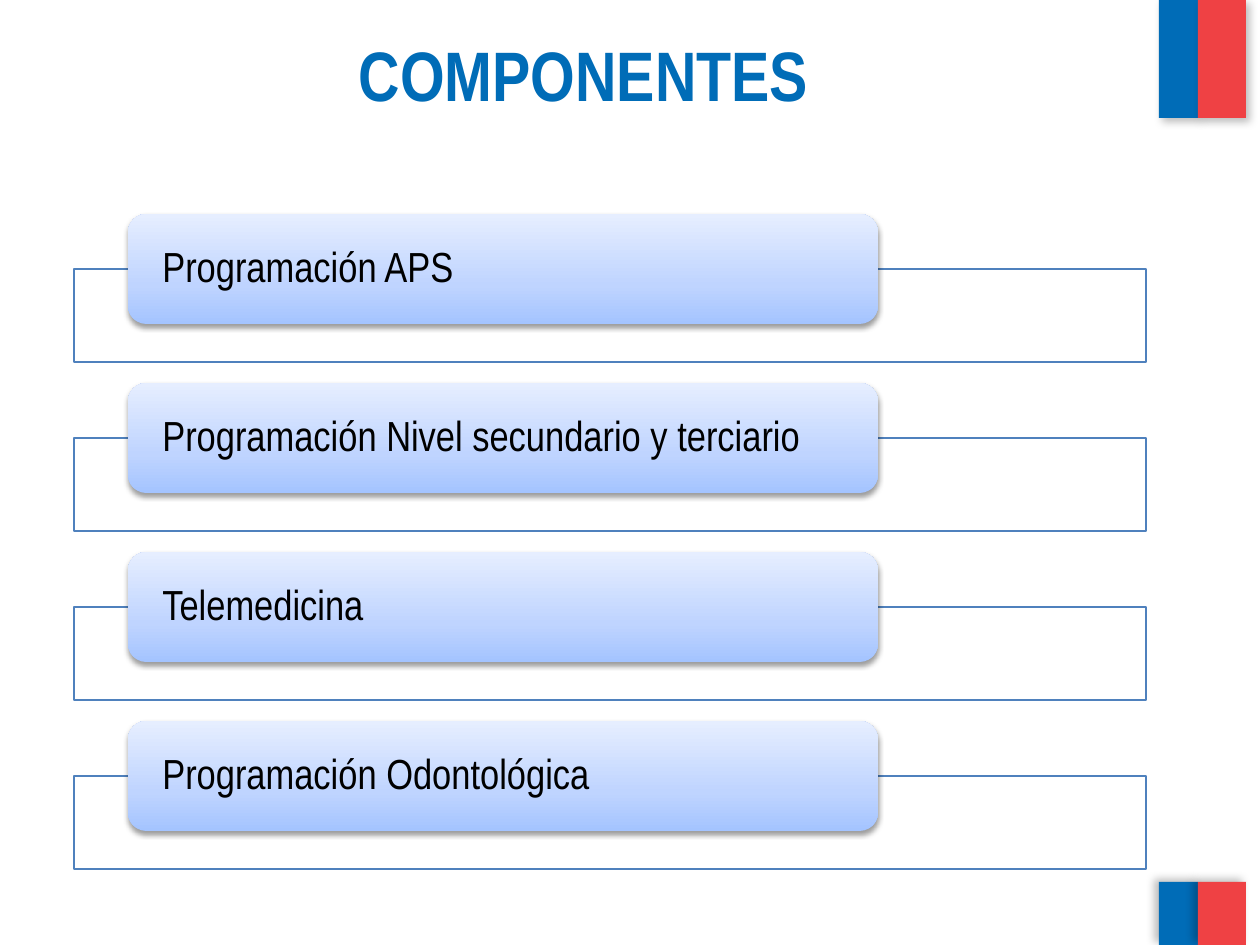
"""Build the COMPONENTES slide: four labelled frames and two corner ribbons."""
from copy import deepcopy
from dataclasses import dataclass

from lxml import etree
from pptx import Presentation
from pptx import util as u
from pptx.dml.color import RGBColor
from pptx.enum import shapes, text
from pptx.oxml.ns import qn


@dataclass(frozen=True)
class Theme:
    font: str = "Arial Narrow"
    title_pt: int = 40
    label_pt: int = 24
    frame_pt: float = 0.75
    blue: str = "006CB7"
    red: str = "EF4144"
    frame: str = "4F81BD"
    white: str = "FFFFFF"
    black: str = "000000"
    gradient: tuple = ((0, "A4C4FF"), (0.35, "BFD4FF"), (1, "E6EEFF"))


THEME = Theme()
TITLE = "COMPONENTES"
COMPONENTS = [
    "Programación APS",
    "Programación Nivel secundario y terciario",
    "Telemedicina",
    "Programación Odontológica",
]
RIBBON_BANDS = [(1159, 39, THEME.blue), (1198, 48, THEME.red)]
RIBBON_ENDS = [(0, 118, 45), (882, 63, 215)]
FIRST_TOP, ROW_PITCH, FRAME_DROP = 214, 169, 55


def px(length):
    return u.Emu(round(length * 914400 / 126))


def rgb(code):
    return RGBColor.from_string(code)


def add_block(slide, preset, box):
    block = slide.shapes.add_shape(preset, *map(px, box))
    block.shadow.inherit = False
    block.line.fill.background()
    return block


def fill_solid(block, color, opacity=100):
    block.fill.solid()
    block.fill.fore_color.rgb = rgb(color)
    if opacity < 100:
        tint = block.element.spPr.find(qn("a:solidFill"))[0]
        etree.SubElement(tint, qn("a:alpha"), val=str(opacity * 1000))


def fill_gradient(block, stops):
    block.fill.gradient()
    block.fill.gradient_angle = 90
    stop_list = block.element.spPr.find(f".//{qn('a:gsLst')}")
    stop_list.insert(1, deepcopy(stop_list[0]))
    for stop, (position, color) in zip(block.fill.gradient_stops, stops):
        stop.position = position
        stop.color.rgb = rgb(color)


def cast_shadow(block, opacity, blur, distance, angle):
    effects = block.element.spPr.find(qn("a:effectLst"))
    shadow = etree.SubElement(
        effects, qn("a:outerShdw"), blurRad=str(u.Pt(blur)),
        dist=str(u.Pt(distance)), dir=str(angle * 60000), rotWithShape="0")
    color = etree.SubElement(shadow, qn("a:srgbClr"), val=THEME.black)
    etree.SubElement(color, qn("a:alpha"), val=str(opacity * 1000))


def write(block, words, size, color, align, anchor, insets, bold=False):
    frame = block.text_frame
    frame.word_wrap = True
    frame.vertical_anchor = anchor
    frame.margin_left, frame.margin_top, frame.margin_right, frame.margin_bottom = map(px, insets)
    paragraph = frame.paragraphs[0]
    paragraph.alignment = align
    run = paragraph.add_run()
    run.text = words
    run.font.name, run.font.size, run.font.bold = THEME.font, u.Pt(size), bold
    run.font.color.rgb = rgb(color)
    return paragraph


def add_ribbon(slide, top, height, angle):
    for left, width, color in RIBBON_BANDS:
        band = add_block(slide, shapes.MSO_SHAPE.RECTANGLE, (left, top, width, height))
        fill_solid(band, color)
        cast_shadow(band, 25, 5, 3, angle)


def add_component(slide, top, words):
    frame = add_block(slide, shapes.MSO_SHAPE.RECTANGLE, (74, top + FRAME_DROP, 1072, 93))
    fill_solid(frame, THEME.white, 90)
    frame.line.color.rgb = rgb(THEME.frame)
    frame.line.width = u.Pt(THEME.frame_pt)
    label = add_block(slide, shapes.MSO_SHAPE.ROUNDED_RECTANGLE, (128, top, 750, 110))
    fill_gradient(label, THEME.gradient)
    cast_shadow(label, 38, 3.1, 1.6, 90)
    paragraph = write(label, words, THEME.label_pt, THEME.black, text.PP_ALIGN.LEFT,
                      text.MSO_ANCHOR.MIDDLE, (29, 0, 29, 0))
    paragraph.line_spacing = 0.9


def main():
    deck = Presentation()
    deck.slide_width, deck.slide_height = px(1260), px(945)
    slide = deck.slides.add_slide(deck.slide_layouts[6])
    for top, height, angle in RIBBON_ENDS:
        add_ribbon(slide, top, height, angle)
    title = slide.shapes.add_textbox(*map(px, (21, 21, 1125, 158)))
    write(title, TITLE, THEME.title_pt, THEME.blue, text.PP_ALIGN.CENTER,
          text.MSO_ANCHOR.TOP, (13, 11, 13, 6), bold=True)
    for row, words in enumerate(COMPONENTS):
        add_component(slide, FIRST_TOP + row * ROW_PITCH, words)
    deck.save("out.pptx")


if __name__ == "__main__":
    main()
